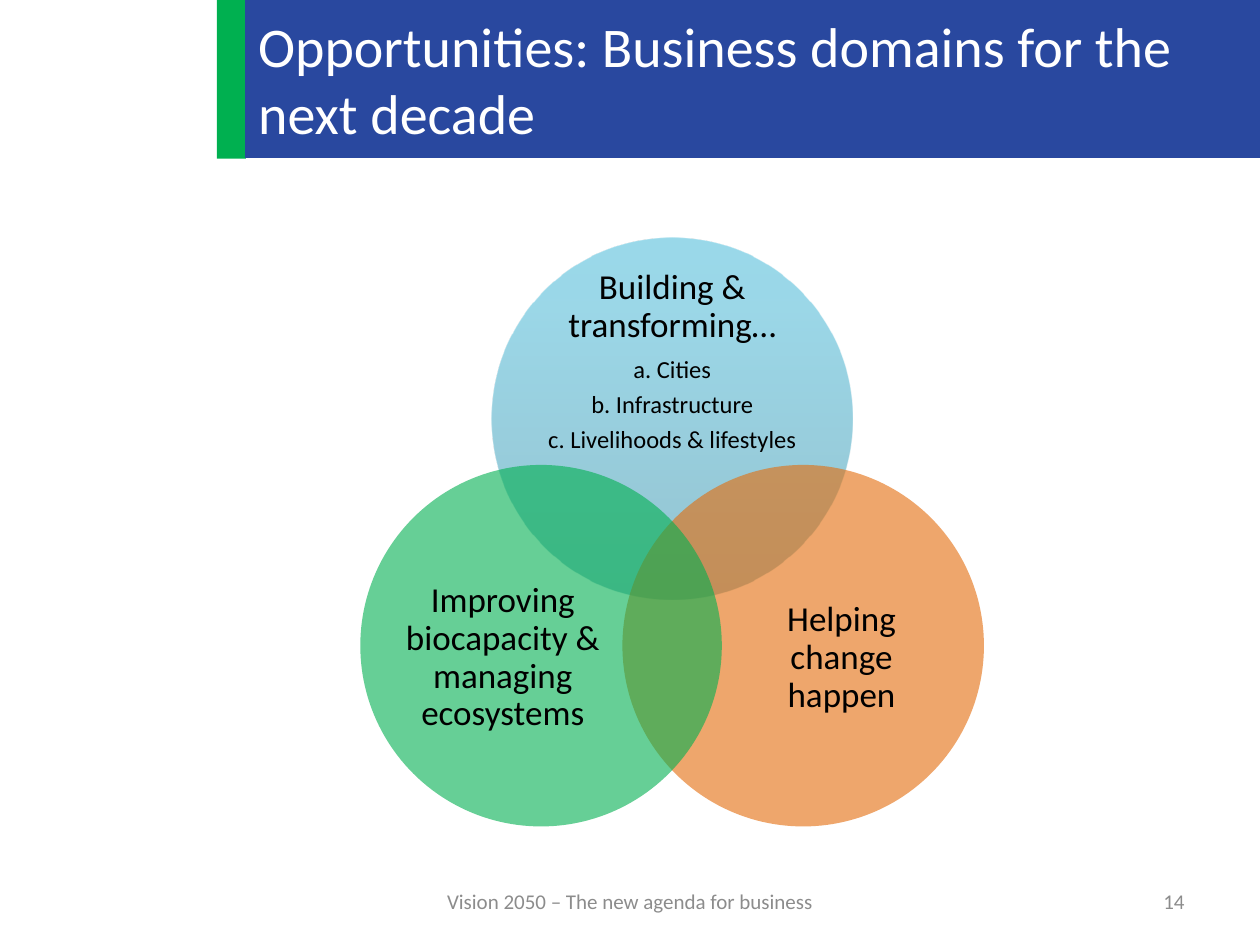
from copy import deepcopy

from lxml.etree import SubElement
from pptx import Presentation
from pptx.dml.color import RGBColor
from pptx.enum.shapes import MSO_SHAPE
from pptx.enum.text import MSO_ANCHOR, PP_ALIGN
from pptx.oxml.ns import qn
from pptx.util import Pt

# Content
TITLE = "Opportunities: Business domains for the next decade"
FOOTER = "Vision 2050 – The new agenda for business"
PAGE_NUMBER = "14"
COLORS = {
    "bar": "29489F", "green": "00B050", "orange": "E46C0A",
    "white": "FFFFFF", "black": "000000", "gray": "8C8C8C",
}
BLUE_STOPS = [(0, "2A88A2"), (0.8, "37B1D2"), (1, "34B4D6")]

# Venn geometry: centre of the top circle, then steps to the lower two
DIAMETER = 206.6
CENTER_X, CENTER_Y = 384.1, 239.4
STEP_X, STEP_Y = 74.9, 129.6

# (column, row, fill, opacity %, label box, lines as (text, size))
DOMAINS = [
    (0, 0, BLUE_STOPS, 50, (308.2, 152.5, 152, 108),
     [("Building & transforming…", 20), ("a. Cities", 14),
      ("b. Infrastructure", 14), ("c. Livelihoods & lifestyles", 14)]),
    (1, 1, COLORS["orange"], 60, (419, 319, 123.8, 113.8),
     [("Helping change happen", 20)]),
    (-1, 1, COLORS["green"], 60, (225.4, 319, 123.8, 113.8),
     [("Improving biocapacity & managing ecosystems", 20)]),
]

prs = Presentation()
prs.slide_width, prs.slide_height = Pt(720), Pt(540)
slide = prs.slides.add_slide(prs.slide_layouts[6])


def add_filled(kind, box, fill, opacity=100):
    shape = slide.shapes.add_shape(kind, *map(Pt, box))
    shape.shadow.inherit = False
    shape.line.fill.background()
    if isinstance(fill, str):
        shape.fill.solid()
        shape.fill.fore_color.rgb = RGBColor.from_string(fill)
    else:
        shape.fill.gradient()
        shape.fill.gradient_angle = 90
        stop_list = shape.fill._fill._gradFill.find(qn("a:gsLst"))
        stop_list.append(deepcopy(stop_list[-1]))
        for stop, (position, color) in zip(shape.fill.gradient_stops, fill):
            stop.position = position
            stop.color.rgb = RGBColor.from_string(color)
    if opacity < 100:
        for color in shape._element.spPr.iter(qn("a:srgbClr")):
            SubElement(color, qn("a:alpha"), val=str(opacity * 1000))
    return shape


def write_text(shape, lines, color="black", align=PP_ALIGN.LEFT,
               inset=None, line_spacing=1.0, after=0):
    frame = shape.text_frame
    frame.word_wrap = True
    frame.vertical_anchor = MSO_ANCHOR.MIDDLE
    if inset is not None:
        frame.margin_left = frame.margin_right = Pt(inset)
        frame.margin_top = frame.margin_bottom = Pt(inset)
    for i, (text, size) in enumerate(lines):
        paragraph = frame.add_paragraph() if i else frame.paragraphs[0]
        paragraph.alignment = align
        paragraph.line_spacing = line_spacing
        last = i == len(lines) - 1
        paragraph.space_after = Pt(0 if last else round(size * after, 1))
        run = paragraph.add_run()
        run.text = text
        run.font.name = "Calibri"
        run.font.size = Pt(size)
        run.font.color.rgb = RGBColor.from_string(COLORS[color])


def add_text(box, lines, **style):
    write_text(slide.shapes.add_textbox(*map(Pt, box)), lines, **style)


# Title bar with green accent
add_filled(MSO_SHAPE.RECTANGLE, (124, 0, 16.6, 90.7), COLORS["green"])
title_bar = add_filled(MSO_SHAPE.RECTANGLE, (140.4, 0, 579.6, 90), COLORS["bar"])
title_bar.line.color.rgb = RGBColor.from_string(COLORS["bar"])
title_bar.line.width = Pt(0.75)
write_text(title_bar, [(TITLE, 32)], color="white")

# Venn circles and their labels
for column, row, fill, opacity, label_box, lines in DOMAINS:
    left = CENTER_X + column * STEP_X - DIAMETER / 2
    top = CENTER_Y + row * STEP_Y - DIAMETER / 2
    add_filled(MSO_SHAPE.OVAL, (left, top, DIAMETER, DIAMETER), fill, opacity)
    add_text(label_box, lines, align=PP_ALIGN.CENTER, inset=0,
             line_spacing=0.9, after=0.35)

# Footer
add_text((516, 500.5, 168, 28.75), [(PAGE_NUMBER, 12)],
         color="gray", align=PP_ALIGN.RIGHT)
add_text((246, 500.5, 228, 28.75), [(FOOTER, 12)],
         color="gray", align=PP_ALIGN.CENTER)

prs.save("out.pptx")
